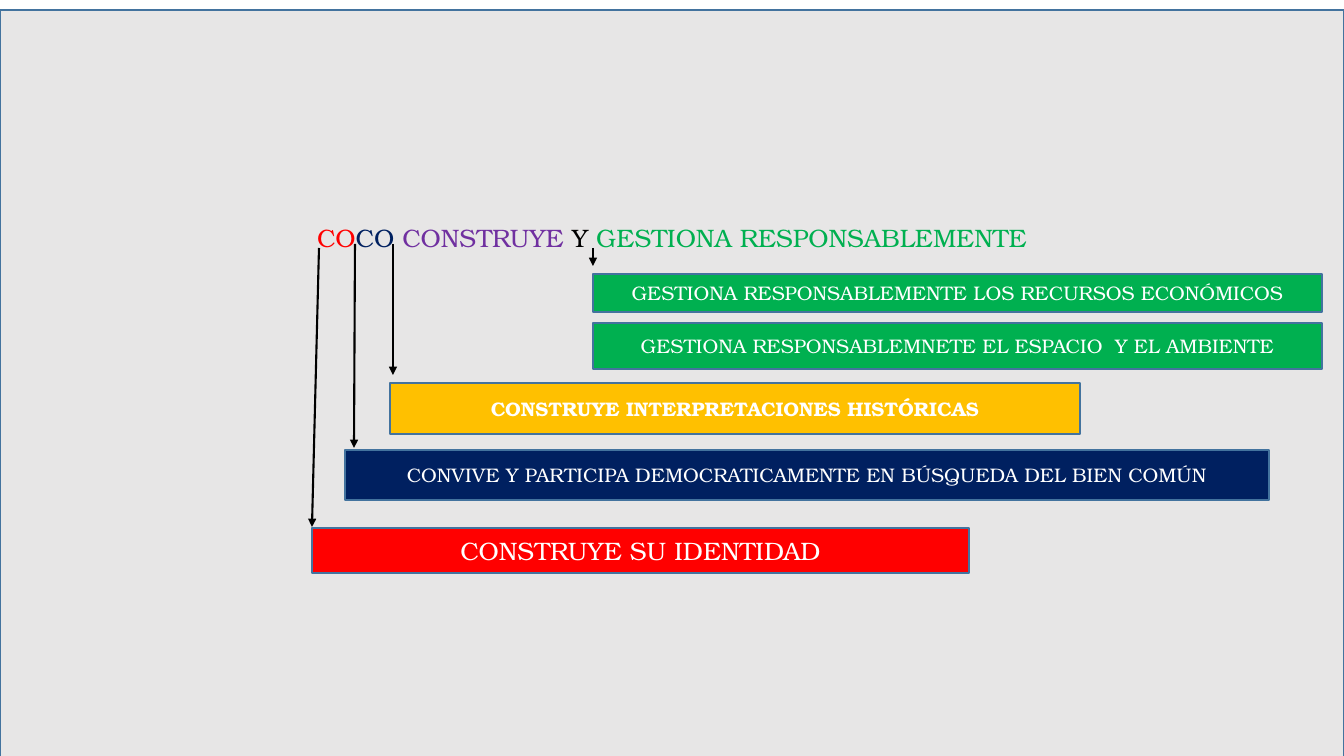
from lxml.etree import SubElement
from pptx import Presentation
from pptx.dml.color import RGBColor
from pptx.enum.shapes import MSO_CONNECTOR as Link, MSO_SHAPE as Shape
from pptx.enum.text import MSO_ANCHOR as Anchor, MSO_AUTO_SIZE as Fit, PP_ALIGN as Align
from pptx.oxml.ns import qn
from pptx.util import Pt

FONT = "TeX Gyre Bonum"
EDGE = "43739E"
GREEN = "00B050"
NAVY = "002060"
RED = "FF0000"

TITLE = [
    ("CO", RED),
    ("CO ", NAVY),
    ("CONSTRUYE", "7030A0"),
    (" Y ", "000000"),
    ("GESTIONA RESPONSABLEMENTE", GREEN),
]
BARS = [
    ("CONSTRUYE SU IDENTIDAD", (312, 528, 657, 45), RED, 18, False),
    ("CONVIVE Y PARTICIPA DEMOCRATICAMENTE EN BÚSQUEDA DEL BIEN COMÚN",
     (345, 450, 924, 50), NAVY, 14, False),
    ("GESTIONA RESPONSABLEMNETE EL ESPACIO  Y EL AMBIENTE",
     (593, 323, 729, 46), GREEN, 14, False),
    ("CONSTRUYE INTERPRETACIONES HISTÓRICAS",
     (390, 383, 690, 51), "FFC000", 14, True),
    ("GESTIONA RESPONSABLEMENTE LOS RECURSOS ECONÓMICOS",
     (593, 274, 729, 38), GREEN, 14, False),
]
ARROWS = [
    (319, 248, 312, 527),
    (355, 244, 354, 448),
    (393, 244, 393, 375),
    (593, 248, 593, 266),
]


def px(n):
    return round(n * 914400 / 100.8)


def paint(fill, color):
    fill.solid()
    fill.fore_color.rgb = RGBColor.from_string(color)


def style(shape, fill):
    paint(shape.fill, fill)
    paint(shape.line.fill, EDGE)
    shape.line.width = Pt(1)


def write(shape, runs, size, anchor, bold=False):
    frame = shape.text_frame
    frame.word_wrap = True
    frame.auto_size = Fit.NONE
    frame.vertical_anchor = anchor
    para = frame.paragraphs[0]
    para.alignment = Align.CENTER
    for text, color in runs:
        run = para.add_run()
        run.text = text
        run.font.name = FONT
        run.font.size = Pt(size)
        run.font.bold = bold
        paint(run.font.fill, color)


def add_panel(slide, box):
    title = slide.shapes.title
    title.left, title.top, title.width, title.height = map(px, box)
    style(title, "E7E6E6")
    title.text_frame.margin_top = px(212)
    write(title, TITLE, 18, Anchor.TOP)


def add_bar(slide, text, box, color, size, bold):
    bar = slide.shapes.add_shape(Shape.RECTANGLE, *map(px, box))
    bar.shadow.inherit = False
    style(bar, color)
    write(bar, [(text, "FFFFFF")], size, Anchor.MIDDLE, bold)


def add_arrow(slide, ends):
    arrow = slide.shapes.add_connector(Link.STRAIGHT, *map(px, ends))
    paint(arrow.line.fill, "000000")
    arrow.line.width = Pt(1.5)
    SubElement(arrow.line._get_or_add_ln(), qn("a:tailEnd"), type="triangle")
    SubElement(arrow._element.spPr, qn("a:effectLst"))


def main():
    deck = Presentation()
    deck.slide_width, deck.slide_height = px(1344), px(756)
    slide = deck.slides.add_slide(deck.slide_layouts[5])
    add_panel(slide, (0, 10, 1344, 756))
    for bar in BARS:
        add_bar(slide, *bar)
    for ends in ARROWS:
        add_arrow(slide, ends)
    deck.save("out.pptx")


if __name__ == "__main__":
    main()
